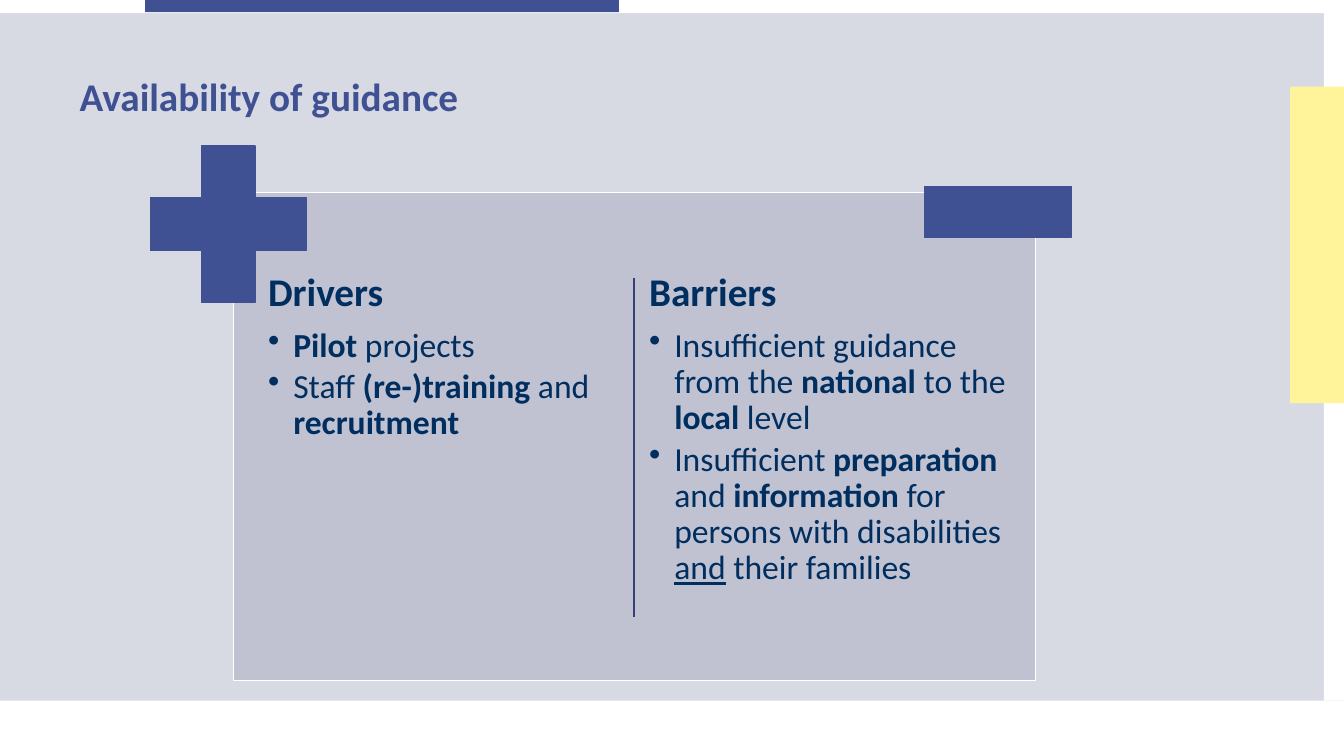
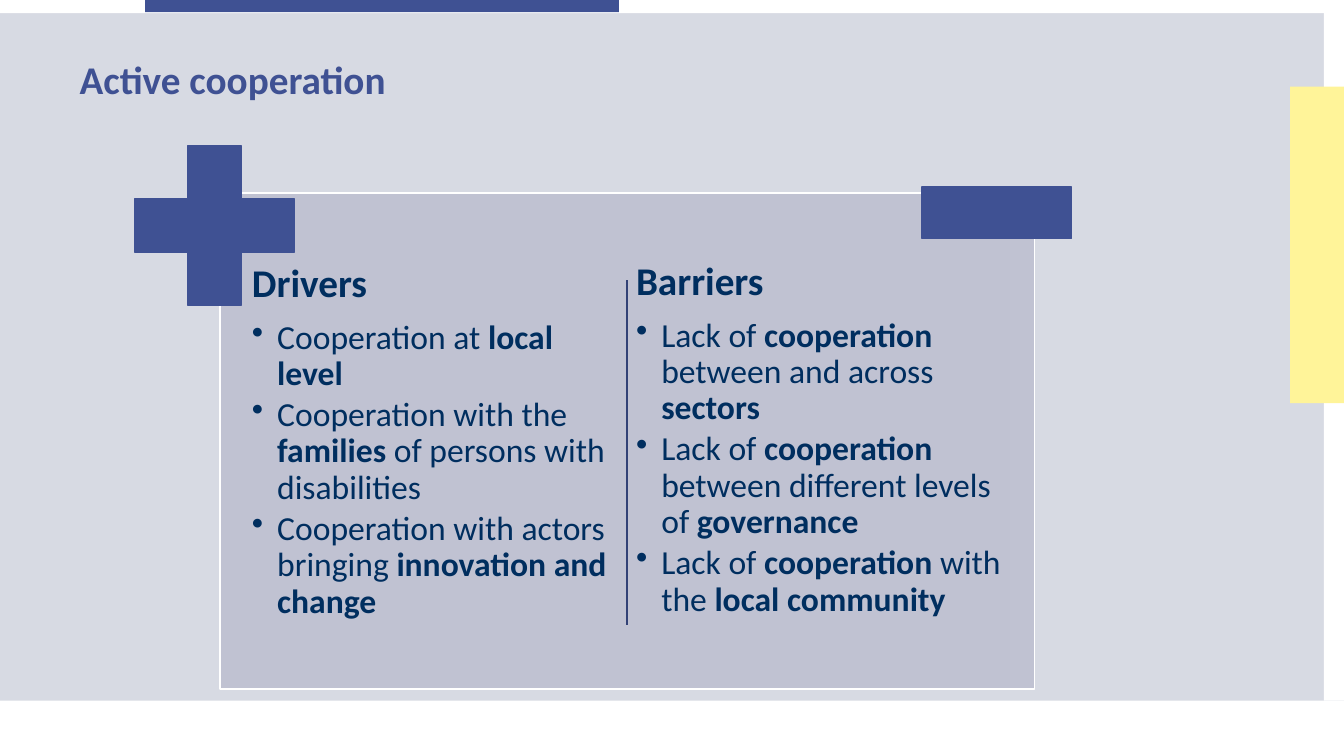
from lxml import etree
from pptx import Presentation
from pptx import util as u
from pptx.dml.color import RGBColor
from pptx.enum import shapes, text
from pptx.oxml import ns

PAPER = RGBColor(0xD7, 0xDA, 0xE3)
WHITE = RGBColor(0xFF, 0xFF, 0xFF)
YELLOW = RGBColor(0xFF, 0xF4, 0x99)
BLUE = RGBColor(0x3F, 0x51, 0x93)
NAVY = RGBColor(0x00, 0x2E, 0x5F)
DIVIDER = RGBColor(0x32, 0x41, 0x76)
LILAC = RGBColor(0xC0, 0xC2, 0xD2)
FONT = "Calibri"
HEADING_SIZE, BODY_SIZE = 28, 24
INSET, INDENT = u.Inches(0.06), u.Inches(0.25)
RECTANGLE = shapes.MSO_SHAPE.RECTANGLE
PLUS = shapes.MSO_SHAPE.CROSS

BANDS = [
    (0, 0, 100, 1.73, WHITE),
    (0, 92.67, 100, 7.33, WHITE),
    (98.5, 0, 1.5, 92.67, WHITE),
    (96, 11.47, 4, 41.87, YELLOW),
    (10.8, 0, 35.25, 1.6, BLUE),
]
FRAME_RIGHT, FRAME_TOP, FRAME_WIDTH = 79.73, 19.33, 68.55

SLIDES = [
    {
        "title": "Availability of guidance",
        "title_top": 10.27,
        "width": 68.55,
        "columns": [
            (19.5, 35.2, "Drivers", [
                "*Pilot* projects",
                "Staff *(re-)training *and *recruitment*",
            ]),
            (47.85, 35.2, "Barriers", [
                "Insufficient guidance from the *national* to the *local* level",
                "Insufficient *preparation* and *information* for persons with "
                "disabilities _and_ their families",
            ]),
        ],
    },
    {
        "title": "Active cooperation",
        "title_top": 8,
        "width": 69.68,
        "columns": [
            (18.3, 34.13, "Drivers", [
                "Cooperation at *local level*",
                "Cooperation with the *families* of persons with disabilities",
                "Cooperation with actors bringing *innovation and change*",
            ]),
            (46.88, 33.87, "Barriers", [
                "Lack of *cooperation* between and across *sectors*",
                "Lack of *cooperation* between different levels of *governance*",
                "Lack of *cooperation* with the *local community*",
            ]),
        ],
    },
]


class Deck:
    def __init__(self):
        self.deck = Presentation()
        self.deck.slide_width = u.Inches(13.33)
        self.deck.slide_height = u.Inches(7.5)
        backdrop = self.deck.slide_master.background.fill
        backdrop.solid()
        backdrop.fore_color.rgb = PAPER
        self.page = None

    def across(self, share):
        return round(self.deck.slide_width * share / 100)

    def down(self, share):
        return round(self.deck.slide_height * share / 100)

    def place(self, left, top, width, height):
        return self.across(left), self.down(top), self.across(width), self.down(height)

    def start_page(self):
        self.page = self.deck.slides.add_slide(self.deck.slide_layouts[6])
        for left, top, width, height, colour in BANDS:
            self.block(RECTANGLE, (left, top, width, height), colour)

    def block(self, kind, area, fill, line=None):
        block = self.page.shapes.add_shape(kind, *self.place(*area))
        block.shadow.inherit = False
        block.fill.solid()
        block.fill.fore_color.rgb = fill
        if line is None:
            block.line.fill.background()
        else:
            block.line.color.rgb = line
            block.line.width = u.Pt(1)
        return block

    def divider(self, left, top, bottom):
        x = self.across(left)
        line = self.page.shapes.add_connector(
            shapes.MSO_CONNECTOR.STRAIGHT, x, self.down(top), x, self.down(bottom))
        line.line.color.rgb = DIVIDER
        line.line.width = u.Pt(1)
        etree.SubElement(line._element.spPr, ns.qn("a:effectLst"))

    def text_box(self, area, inset, anchor):
        frame = self.page.shapes.add_textbox(*self.place(*area)).text_frame
        frame.word_wrap = True
        frame.vertical_anchor = anchor
        frame.margin_left = frame.margin_right = inset
        frame.margin_top = frame.margin_bottom = inset
        return frame

    def span(self, para, words, size, colour, bold=False, underline=False):
        span = para.add_run()
        span.text = words
        span.font.name = FONT
        span.font.size = u.Pt(size)
        span.font.color.rgb = colour
        span.font.bold = bold
        if underline:
            span.font.underline = True

    def title(self, words, top):
        frame = self.text_box((5.93, top, 73.8, 5.6), 0, text.MSO_ANCHOR.BOTTOM)
        para = frame.paragraphs[0]
        para.line_spacing = 0.9
        self.span(para, words, HEADING_SIZE, BLUE, bold=True)

    def bullet(self, frame, marked_words):
        para = frame.add_paragraph()
        properties = para._p.get_or_add_pPr()
        properties.set("marL", str(INDENT))
        properties.set("indent", str(-INDENT))
        etree.SubElement(properties, ns.qn("a:buChar")).set("char", "•")
        para.line_spacing = 0.9
        para.space_after = u.Pt(BODY_SIZE * 0.15)
        for i, part in enumerate(marked_words.split("*")):
            for j, words in enumerate(part.split("_")):
                if words:
                    self.span(para, words, BODY_SIZE, NAVY, i % 2 == 1, j % 2 == 1)

    def column(self, area, heading, points):
        frame = self.text_box(area, INSET, text.MSO_ANCHOR.TOP)
        para = frame.paragraphs[0]
        para.line_spacing = 0.9
        para.space_after = u.Pt(HEADING_SIZE * 0.35)
        self.span(para, heading, HEADING_SIZE, NAVY, bold=True)
        for point in points:
            self.bullet(frame, point)

    def comparison(self, frame_width, columns):
        scale = frame_width / FRAME_WIDTH
        frame_left = FRAME_RIGHT - frame_width

        def framed(left, top, width, height):
            return (frame_left + left * scale, FRAME_TOP + top * scale,
                    width * scale, height * scale)

        self.block(RECTANGLE, framed(6.22, 6.13, 59.63, 64.53), LILAC, WHITE)
        for left, top, heading, points in columns:
            self.column((left, top, 27.68 * scale, 53.07 * scale), heading, points)
        plus = self.block(PLUS, framed(0, 0, 11.63, 20.67), BLUE, BLUE)
        plus.adjustments[0] = 0.33
        self.block(RECTANGLE, framed(57.6, 5.33, 10.95, 6.67), BLUE, BLUE)
        left, top, _, height = framed(36, 17.47, 0, 44.8)
        self.divider(left, top, top + height)


def main():
    show = Deck()
    for content in SLIDES:
        show.start_page()
        show.title(content["title"], content["title_top"])
        show.comparison(content["width"], content["columns"])
    show.deck.save("out.pptx")


if __name__ == "__main__":
    main()
